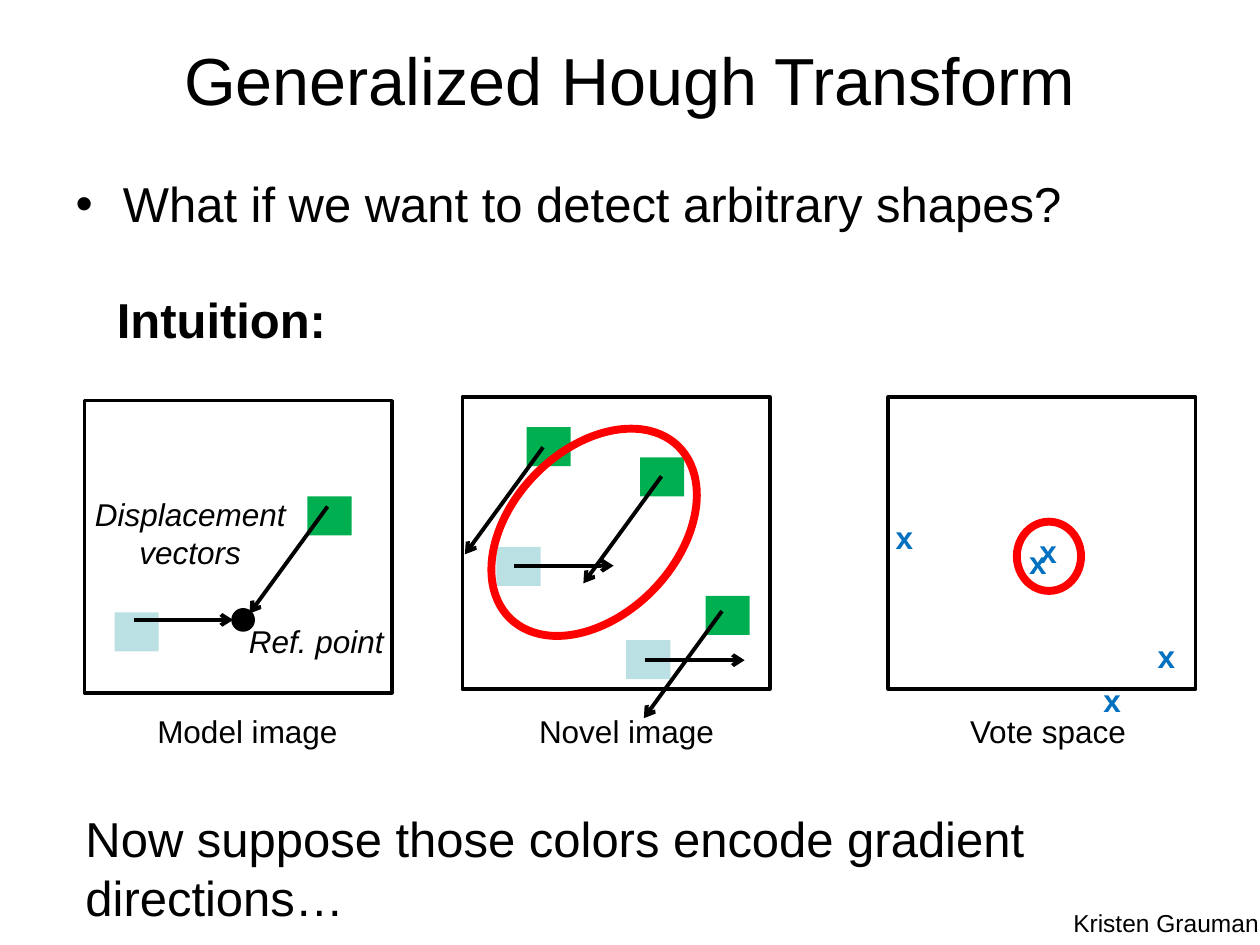
from dataclasses import dataclass

from lxml.etree import SubElement
from pptx import Presentation
from pptx.dml.color import RGBColor
from pptx.enum.shapes import MSO_CONNECTOR as Connector, MSO_SHAPE as Shape
from pptx.enum.text import MSO_ANCHOR as Anchor, PP_ALIGN as Align
from pptx.oxml.ns import qn
from pptx.util import Inches, Pt


@dataclass(frozen=True)
class Theme:
    font: str = "Arial"
    ink: str = "000000"
    green: str = "00B050"
    pale: str = "BBE0E3"
    red: str = "FF0000"
    vote: str = "0070C0"
    title: float = 38
    body: float = 28
    label: float = 18
    credit: float = 14
    frame: float = 2
    arrow: float = 2.25
    ring: float = 4.5


THEME = Theme()
PANEL = (2.44, 2.32)
PATCH = (0.35, 0.31)
VECTORS = {THEME.green: (-0.62, 0.85), THEME.pale: (0.79, 0)}


def color(value):
    return RGBColor.from_string(value)


def place(shape, box):
    shape.left, shape.top, shape.width, shape.height = map(Inches, box)


def write(frame, text, size, tint=THEME.ink, align=None, bold=None, italic=None):
    frame.text = text
    para = frame.paragraphs[0]
    para.alignment = align
    for span in para.runs:
        font = span.font
        font.name, font.size, font.bold, font.italic = THEME.font, Pt(size), bold, italic
        font.color.rgb = color(tint)
    return para


def add_text(page, box, text, size, wrap=True, **style):
    frame = page.shapes.add_textbox(*map(Inches, box)).text_frame
    frame.word_wrap = wrap
    write(frame, text, size, **style)


def add_figure(page, kind, box, fill=None, line=None, weight=THEME.frame):
    shape = page.shapes.add_shape(kind, *map(Inches, box))
    shape.shadow.inherit = False
    if fill:
        shape.fill.solid()
        shape.fill.fore_color.rgb = color(fill)
    else:
        shape.fill.background()
    if line:
        shape.line.color.rgb = color(line)
        shape.line.width = Pt(weight)
    else:
        shape.line.fill.background()
    return shape


def add_arrow(page, x, y, dx, dy):
    arrow = page.shapes.add_connector(
        Connector.STRAIGHT, *map(Inches, (x, y, x + dx, y + dy)))
    arrow.line.color.rgb = color(THEME.ink)
    arrow.line.width = Pt(THEME.arrow)
    SubElement(arrow.line._get_or_add_ln(), qn("a:tailEnd"), type="arrow")
    SubElement(arrow._element.spPr, qn("a:effectLst"))


def add_patch(page, x, y, tint, start_x, start_y):
    add_figure(page, Shape.RECTANGLE, (x, y, *PATCH), fill=tint)
    add_arrow(page, x + start_x, y + start_y, *VECTORS[tint])


def add_panel(page, left, top, caption, caption_box):
    add_figure(page, Shape.RECTANGLE, (left, top, *PANEL), line=THEME.ink)
    x, y, width = caption_box
    add_text(page, (left + x, top + y, width, 0.4), caption, THEME.label, wrap=False)


def add_model(page, left, top):
    add_panel(page, left, top, "Model image", (0.48, 2.42, 1.65))
    add_figure(page, Shape.OVAL, (left + 1.18, top + 1.66, 0.16, 0.16),
               fill=THEME.ink, line=THEME.ink)
    add_patch(page, left + 0.24, top + 1.68, THEME.pale, 0.15, 0.06)
    add_patch(page, left + 1.77, top + 0.76, THEME.green, 0.16, 0.08)
    for text, x, y, height in (("Ref. point", 0.93, 1.71, 0.4),
                               ("Displacement vectors", -0.07, 0.7, 0.71)):
        add_text(page, (left + x, top + y, 1.82, height), text, THEME.label,
                 align=Align.CENTER, italic=True)


def add_novel(page, left, top):
    add_panel(page, left, top, "Novel image", (0.51, 2.45, 1.6))
    for x, y, tint, start_x, start_y in (
        (0.51, 0.24, THEME.green, 0.13, 0.16),
        (1.41, 0.48, THEME.green, 0.17, 0.15),
        (0.27, 1.19, THEME.pale, 0.14, 0.15),
        (1.3, 1.93, THEME.pale, 0.15, 0.16),
        (1.93, 1.58, THEME.green, 0.13, 0.12),
    ):
        add_patch(page, left + x, top + y, tint, start_x, start_y)
    outline = add_figure(page, Shape.OVAL, (left + 0.39, top + 0.12, 1.31, 1.91),
                         line=THEME.red, weight=THEME.ring)
    outline.rotation = 44.3


def add_votes(page, left, top):
    add_panel(page, left, top, "Vote space", (0.55, 2.45, 1.45))
    for x, y in ((1.02, 1.11), (1.1, 1.02), (-0.04, 0.91), (1.61, 2.21), (2.04, 1.86)):
        add_text(page, (left + x, top + y, 0.4, 0.4), "x", THEME.label,
                 tint=THEME.vote, bold=True)
    add_figure(page, Shape.OVAL, (left + 1.02, top + 0.99, 0.51, 0.55),
               line=THEME.red, weight=THEME.ring)


def add_heading(page):
    title, body = page.placeholders
    place(title, (0, 0, 10, 1.25))
    title.text_frame.vertical_anchor = Anchor.MIDDLE
    write(title.text_frame, "Generalized Hough Transform", THEME.title, align=Align.CENTER)
    place(body, (0.5, 1.33, 9, 0.87))
    write(body.text_frame, "What if we want to detect arbitrary shapes?", THEME.body)
    add_text(page, (0.83, 2.25, 2.2, 0.57), "Intuition:", THEME.body, bold=True)


def add_closing(page):
    add_text(page, (0.58, 6.37, 9.41, 1.04),
             "Now suppose those colors encode gradient directions…", THEME.body)
    add_text(page, (8.42, 7.16, 2, 0.34), "Kristen Grauman", THEME.credit)


def main():
    deck = Presentation()
    deck.slide_width, deck.slide_height = Inches(10), Inches(7.5)
    page = deck.slides.add_slide(deck.slide_layouts[1])
    add_heading(page)
    add_model(page, 0.67, 3.18)
    add_novel(page, 3.67, 3.15)
    add_votes(page, 7.05, 3.15)
    add_closing(page)
    deck.save("out.pptx")


if __name__ == "__main__":
    main()
